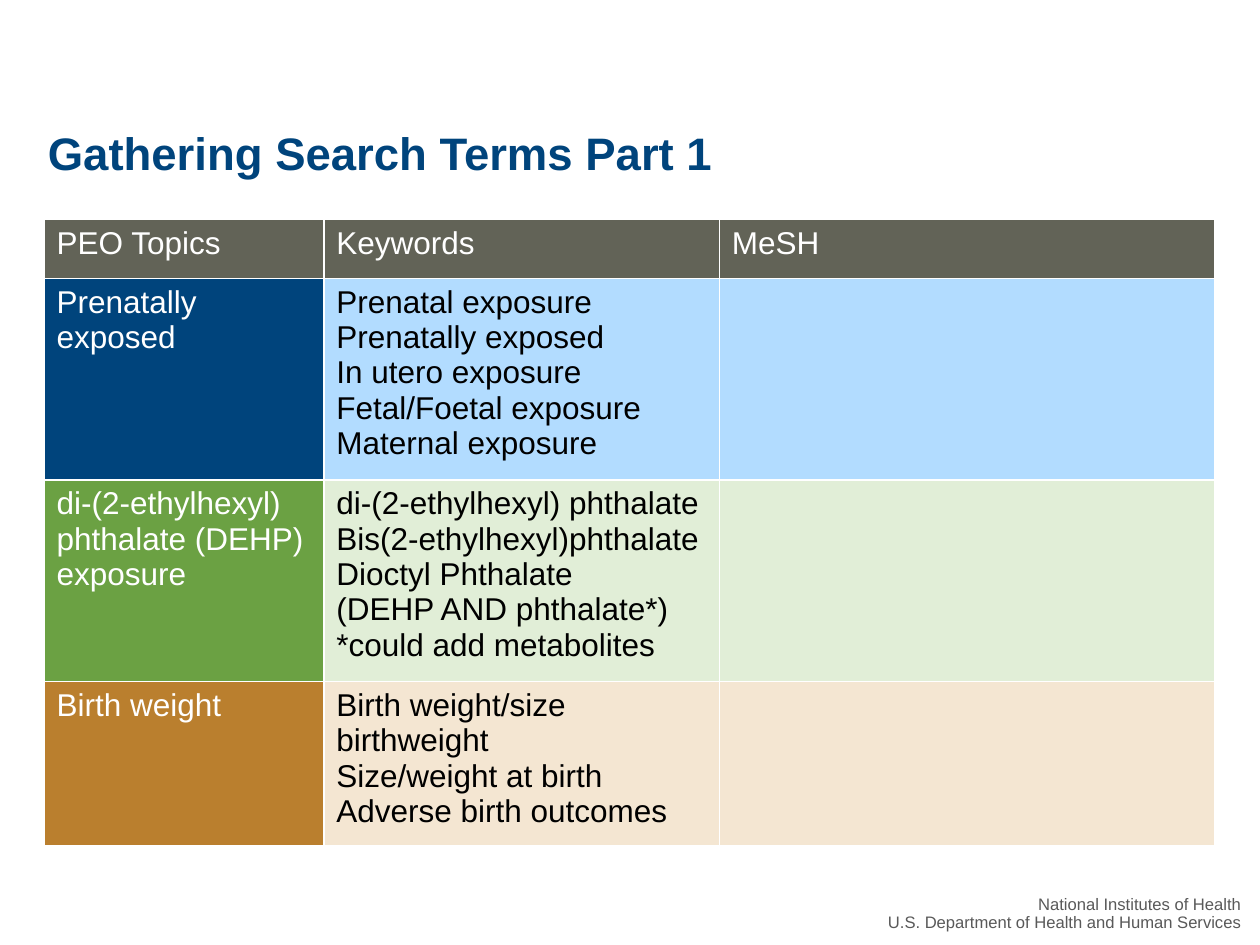
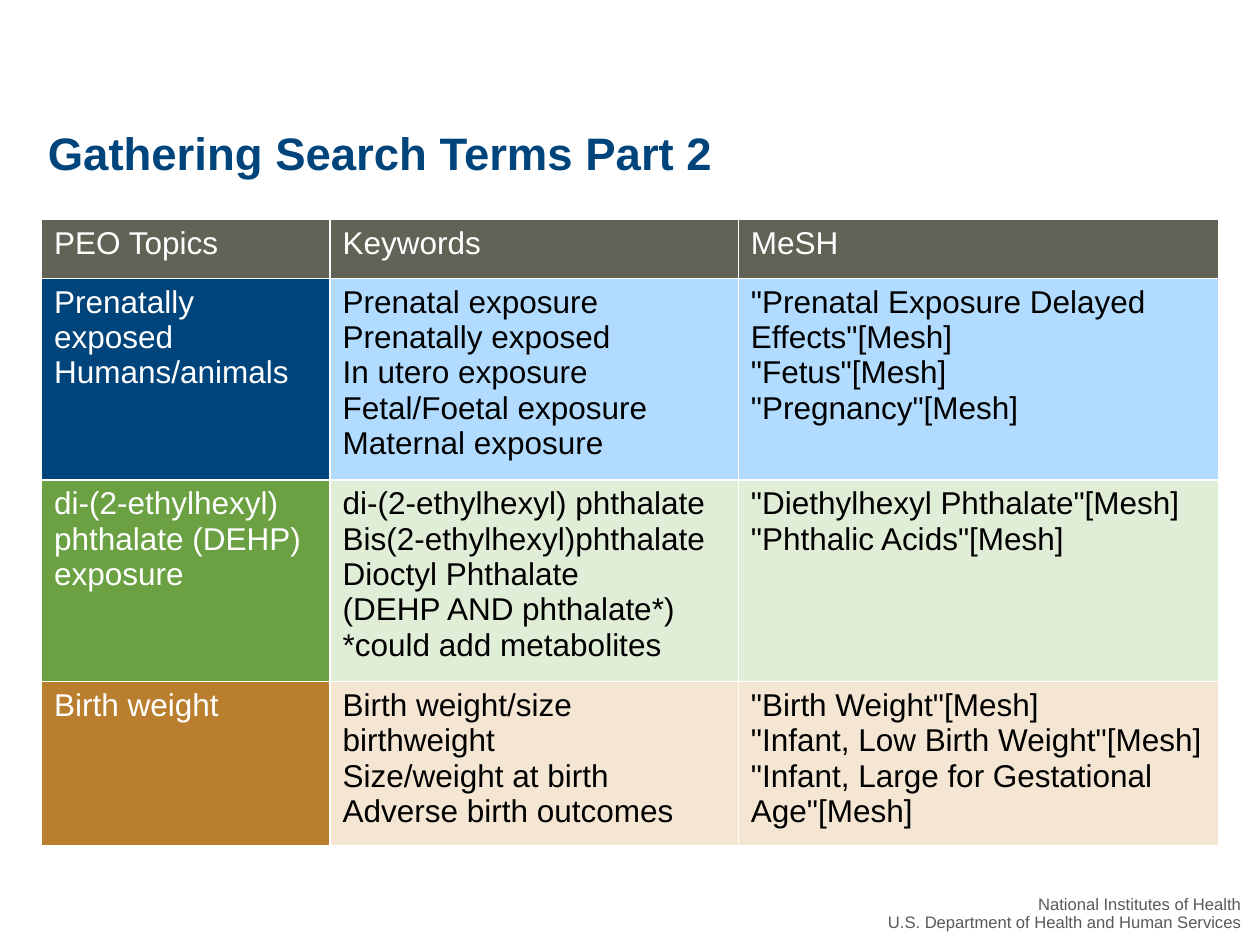
from pptx import Presentation
from pptx import util as u
from pptx.dml.color import RGBColor
from pptx.enum import text
from pptx.oxml import parse_xml
from pptx.oxml.ns import nsdecls

COLORS = {
    "title": "00447C", "footer": "595959", "header": "626357",
    "white": "FFFFFF", "black": "000000",
}
ROW_FILLS = [("00447C", "B2DCFF"), ("6BA143", "E1EED7"), ("BA7F2E", "F4E6D2")]
FONT = "Arial"
HEADINGS = ["PEO Topics", "Keywords", "MeSH"]
ROW_HEIGHTS = [0.47, 1.5, 1.5, 1.21]
TABLE_TOP = 1.74
FOOTER = "National Institutes of Health\nU.S. Department of Health and Human Services"
TOPICS = [
    "Prenatally exposed",
    "di-(2-ethylhexyl) phthalate (DEHP) exposure",
    "Birth weight",
]
KEYWORDS = [
    "Prenatal exposure\nPrenatally exposed\nIn utero exposure\n"
    "Fetal/Foetal exposure\nMaternal exposure",
    "di-(2-ethylhexyl) phthalate\nBis(2-ethylhexyl)phthalate\nDioctyl Phthalate\n"
    "(DEHP AND phthalate*)\n*could add metabolites",
    "Birth weight/size\nbirthweight\nSize/weight at birth\nAdverse birth outcomes",
]
MESH = [
    '"Prenatal Exposure Delayed Effects"[Mesh]\n"Fetus"[Mesh]\n"Pregnancy"[Mesh]',
    '"Diethylhexyl Phthalate"[Mesh]\n"Phthalic Acids"[Mesh]',
    '"Birth Weight"[Mesh]\n"Infant, Low Birth Weight"[Mesh]\n'
    '"Infant, Large for Gestational Age"[Mesh]',
]


def format_text(tf, size, color, bold=False, align=text.PP_ALIGN.LEFT):
    """Apply one font and alignment to all the text in a frame."""
    for p in tf.paragraphs:
        p.alignment = align
        for r in p.runs:
            r.font.name = FONT
            r.font.size = u.Pt(size)
            r.font.bold = bold
            r.font.color.rgb = RGBColor.from_string(color)


def add_title(s, title):
    """Fill and place the title placeholder."""
    sp = s.shapes.title
    sp.left, sp.top = u.Inches(0.28), u.Inches(0.94)
    sp.width, sp.height = u.Inches(9), u.Inches(0.8)
    tf = sp.text_frame
    tf.text = title
    tf.vertical_anchor = text.MSO_ANCHOR.TOP
    tf.auto_size = text.MSO_AUTO_SIZE.NONE
    format_text(tf, 26, COLORS["title"], bold=True)


def add_footer(s):
    """Add the organisation lines at the bottom right."""
    sp = s.shapes.add_textbox(u.Inches(6.92), u.Inches(7.06), u.Inches(3.08), u.Inches(0.44))
    tf = sp.text_frame
    tf.text = FOOTER
    tf.word_wrap = False
    tf.auto_size = text.MSO_AUTO_SIZE.SHAPE_TO_FIT_TEXT
    tf.vertical_anchor = text.MSO_ANCHOR.BOTTOM
    tf.margin_right, tf.margin_bottom = u.Inches(0.15), u.Inches(0.1)
    format_text(tf, 9.5, COLORS["footer"], align=text.PP_ALIGN.RIGHT)
    for p in tf.paragraphs:
        p.line_spacing = 0.9


def add_borders(cell):
    """Draw a thin white line on each side of a cell."""
    tcPr = cell._tc.get_or_add_tcPr()
    for side in ("lnL", "lnR", "lnT", "lnB"):
        tcPr.append(parse_xml(
            f'<a:{side} {nsdecls("a")} w="{u.Pt(1)}"><a:solidFill>'
            f'<a:srgbClr val="{COLORS["white"]}"/></a:solidFill></a:{side}>'))


def fill_cell(cell, content, fill, color):
    """Set the text, borders and fill of a cell."""
    cell.text_frame.text = content
    format_text(cell.text_frame, 18, color)
    add_borders(cell)
    cell.fill.solid()
    cell.fill.fore_color.rgb = RGBColor.from_string(fill)


def add_terms_table(s, left, col_widths, topics, mesh):
    """Add the table of topics, keywords and MeSH terms."""
    table = s.shapes.add_table(
        len(ROW_HEIGHTS), len(col_widths), u.Inches(left), u.Inches(TABLE_TOP),
        u.Inches(sum(col_widths)), u.Inches(sum(ROW_HEIGHTS))).table
    table.first_row = table.horz_banding = False
    for column, width in zip(table.columns, col_widths):
        column.width = u.Inches(width)
    for row, height in zip(table.rows, ROW_HEIGHTS):
        row.height = u.Inches(height)
    for col, heading in enumerate(HEADINGS):
        fill_cell(table.cell(0, col), heading, COLORS["header"], COLORS["white"])
    rows = zip(topics, KEYWORDS, mesh, ROW_FILLS)
    for row, (topic, keywords, terms, (dark, light)) in enumerate(rows, 1):
        fill_cell(table.cell(row, 0), topic, dark, COLORS["white"])
        fill_cell(table.cell(row, 1), keywords, light, COLORS["black"])
        fill_cell(table.cell(row, 2), terms, light, COLORS["black"])


def add_terms_slide(prs, part, left, col_widths, topics, mesh):
    """Add one slide of the search terms series."""
    s = prs.slides.add_slide(prs.slide_layouts[5])
    add_footer(s)
    add_title(s, f"Gathering Search Terms Part {part}")
    add_terms_table(s, left, col_widths, topics, mesh)


def main():
    """Build and save the presentation."""
    prs = Presentation()
    prs.slide_width, prs.slide_height = u.Inches(10), u.Inches(7.5)
    add_terms_slide(prs, 1, 0.35, [2.22, 3.14, 3.93], TOPICS, [""] * len(TOPICS))
    detailed_topics = [TOPICS[0] + " Humans/animals"] + TOPICS[1:]
    add_terms_slide(prs, 2, 0.33, [2.29, 3.24, 3.81], detailed_topics, MESH)
    prs.save("out.pptx")


if __name__ == "__main__":
    main()
